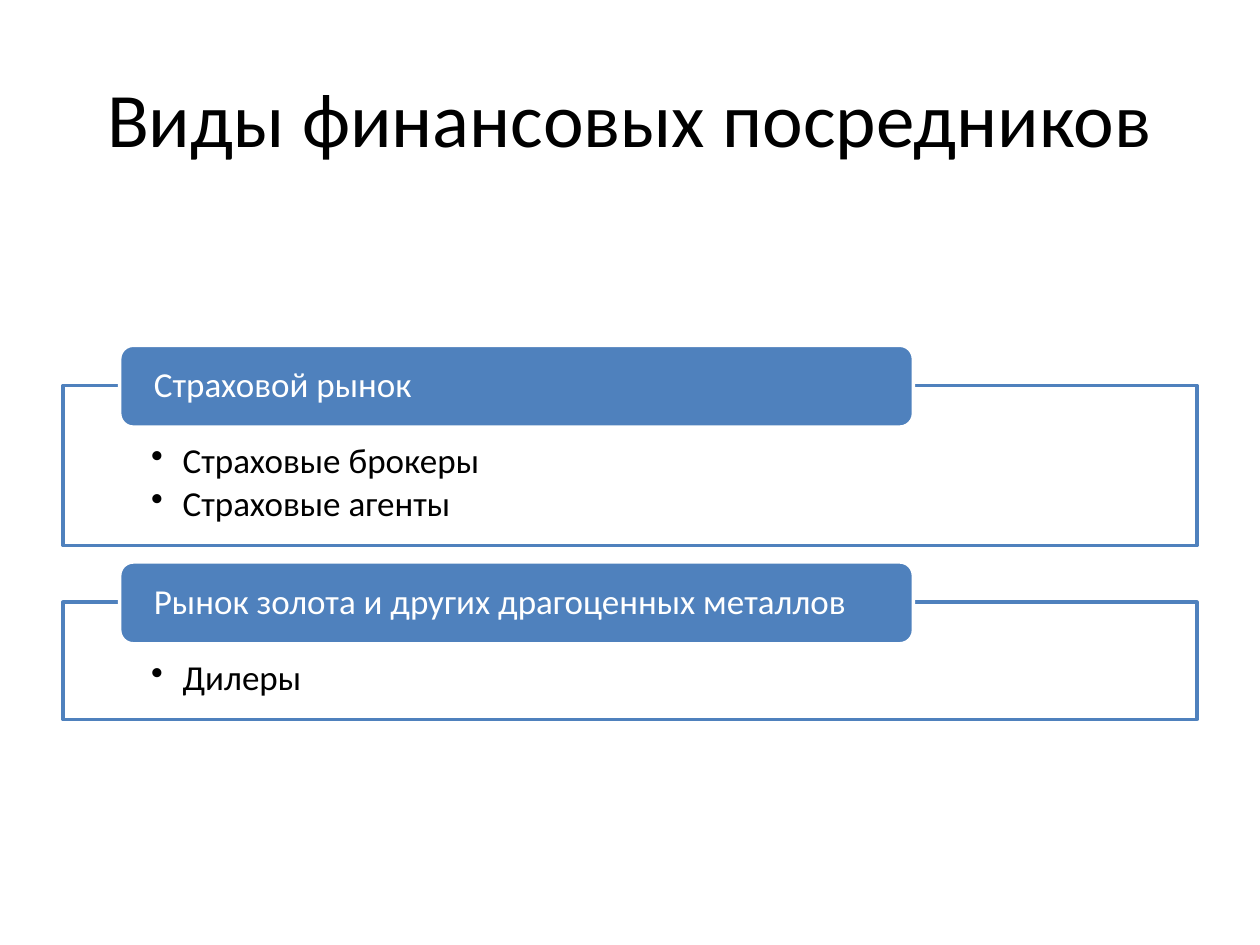
from pptx import Presentation
from pptx.dml.color import RGBColor
from pptx.enum.shapes import MSO_SHAPE as Kind
from pptx.enum.text import MSO_ANCHOR as Anchor, PP_ALIGN as Align
from pptx.oxml.ns import qn
from pptx.util import Inches, Pt
from lxml.etree import SubElement as Sub

BLUE, WHITE, BLACK = "4F81BD", "FFFFFF", "000000"
FONT = "Calibri"
LEFT, WIDE = 0.5, 9
TAB = 0.65
RISE = 0.32
GROUPS = [
    (3.06, 1.27, "Страховой рынок", ["Страховые брокеры", "Страховые агенты"]),
    (4.78, 0.93, "Рынок золота и других драгоценных металлов", ["Дилеры"]),
]


def paint(color, code):
    """Set a colour format from a hex string."""
    color.rgb = RGBColor.from_string(code)


def style(para, size, code, align=Align.LEFT):
    """Format the runs and the alignment of a paragraph."""
    para.alignment = align
    for run in para.runs:
        run.font.name, run.font.size = FONT, Pt(size)
        paint(run.font.color, code)


def panel(slide, kind, box, fill, line, pads, anchor, lines):
    """Add a filled, outlined shape with text and return it."""
    shape = slide.shapes.add_shape(kind, *map(Inches, box))
    shape.shadow.inherit = False
    shape.fill.solid()
    paint(shape.fill.fore_color, fill)
    paint(shape.line.color, line)
    shape.line.width = Pt(2)
    frame = shape.text_frame
    frame.word_wrap, frame.vertical_anchor = True, anchor
    frame.margin_left, frame.margin_top, frame.margin_right, frame.margin_bottom = map(Inches, pads)
    frame.text = "\n".join(lines)
    for para in frame.paragraphs:
        style(para, 20, BLACK if fill == WHITE else WHITE)
        para.line_spacing = 0.9
    return shape


def bullet(para):
    """Give a paragraph a hanging bullet."""
    para.space_after = Pt(3)
    props = para._p.get_or_add_pPr()
    props.set("marL", str(Inches(0.25)))
    props.set("indent", str(-Inches(0.25)))
    Sub(props, qn("a:buChar"), char="•")


def group(slide, box, head, items):
    """Draw a framed list with a heading tab over its top edge."""
    left, top, wide, high = box
    frame = panel(slide, Kind.RECTANGLE, box, WHITE, BLUE,
                  (0.7, 0.46, 0.7, 0.16), Anchor.TOP, items)
    tint = frame.fill._xPr.find(qn("a:solidFill"))[0]
    Sub(tint, qn("a:alpha"), val="90000")
    for para in frame.text_frame.paragraphs:
        bullet(para)
    tab = (left + wide * 0.05, top - RISE, wide * 0.7, TAB)
    panel(slide, Kind.ROUNDED_RECTANGLE, tab, BLUE, WHITE,
          (0.24, 0, 0.24, 0), Anchor.MIDDLE, [head])


def title(slide, box, text):
    """Fill and place the title."""
    shape = slide.shapes.title
    shape.left, shape.top, shape.width, shape.height = map(Inches, box)
    shape.text_frame.text = text
    shape.text_frame.vertical_anchor = Anchor.MIDDLE
    style(shape.text_frame.paragraphs[0], 44, BLACK, Align.CENTER)


def main():
    """Build and save the slide."""
    deck = Presentation()
    deck.slide_width, deck.slide_height = Inches(10), Inches(7.5)
    slide = deck.slides.add_slide(deck.slide_layouts[5])
    title(slide, (LEFT, 0.3, WIDE, 1.25), "Виды финансовых посредников")
    for top, high, head, items in GROUPS:
        group(slide, (LEFT, top, WIDE, high), head, items)
    deck.save("out.pptx")


if __name__ == "__main__":
    main()
